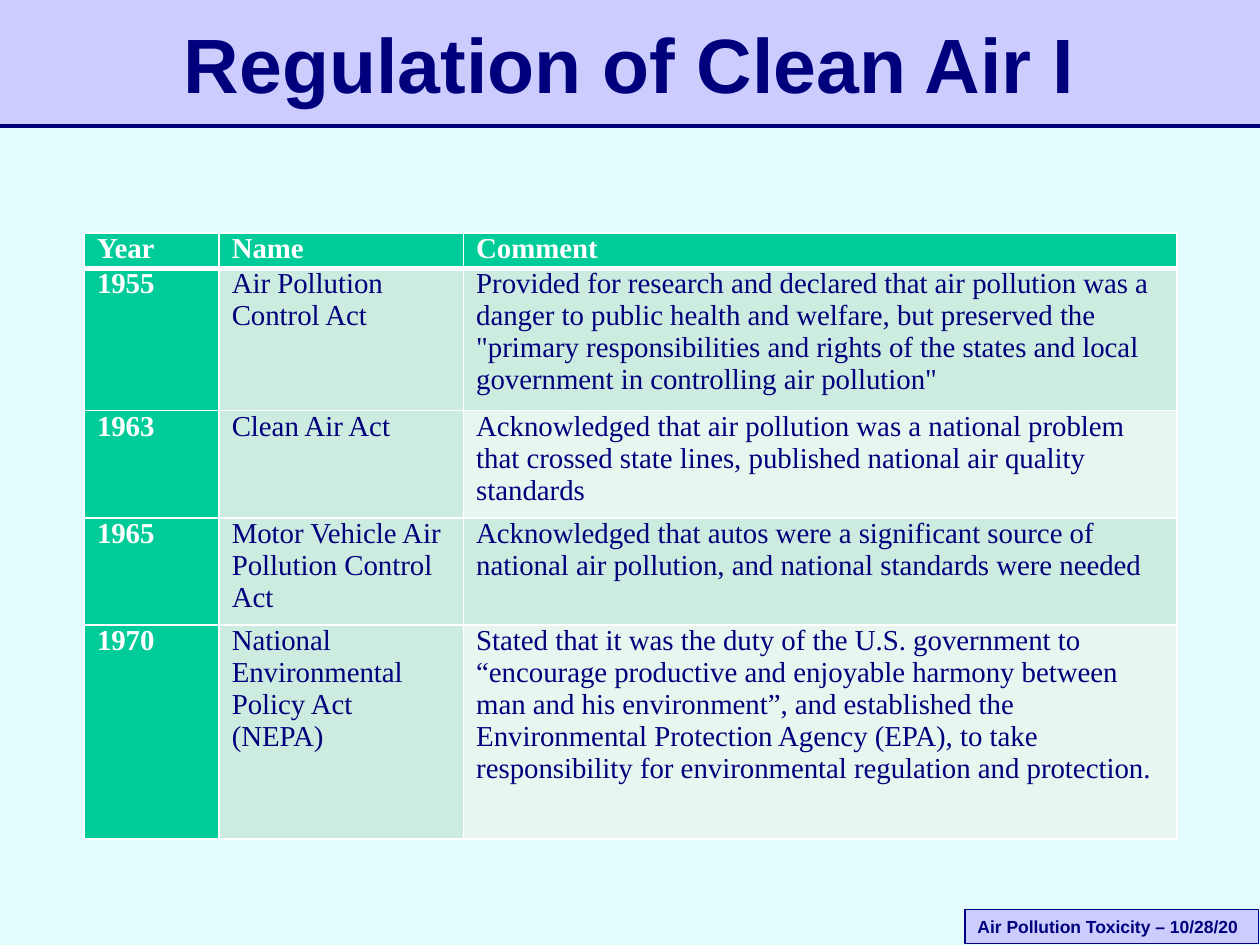
from lxml.etree import SubElement as Sub
from pptx import Presentation
from pptx.dml.color import RGBColor
from pptx.enum.shapes import MSO_CONNECTOR as Link, MSO_SHAPE as Form
from pptx.enum.text import MSO_ANCHOR as Anchor, PP_ALIGN as Align
from pptx.oxml.ns import qn
from pptx.util import Inches, Pt

NAVY, LILAC, SKY, WHITE = "00007D", "CCCCFF", "E2FCFE", "FFFFFF"
GREEN, MINT, PALE = "00CC99", "CBECDE", "E7F6EF"
HEAD = ("Year", "Name", "Comment")
ACTS = (
    ("1955", "Air Pollution Control Act",
     "Provided for research and declared that air pollution was a danger to "
     "public health and welfare, but preserved the \"primary responsibilities "
     "and rights of the states and local government in controlling air pollution\""),
    ("1963", "Clean Air Act",
     "Acknowledged that air pollution was a national problem that crossed "
     "state lines, published national air quality standards"),
    ("1965", "Motor Vehicle Air Pollution Control Act",
     "Acknowledged that autos were a significant source of national air "
     "pollution, and national standards were needed"),
    ("1970", "National Environmental Policy Act (NEPA)",
     "Stated that it was the duty of the U.S. government to “encourage "
     "productive and enjoyable harmony between man and his environment”, and "
     "established the Environmental Protection Agency (EPA), to take "
     "responsibility for environmental regulation and protection."),
)
COLS = (1.07, 1.94, 5.66)
ROWS = (0.28, 1.13, 0.85, 0.85, 1.7)


def color(code):
    return RGBColor.from_string(code)


class Deck:
    sans, serif = "Arial", "Times New Roman"

    def __init__(self, slide):
        self.slide = slide
        self.shapes = slide.shapes
        self.paint(slide.background.fill, SKY)

    def paint(self, fill, code):
        fill.solid()
        fill.fore_color.rgb = color(code)

    def add_text(self, para, text, size, face, code, bold, align=Align.LEFT):
        para.alignment = align
        run = para.add_run()
        run.text = text
        font = run.font
        font.size, font.name, font.bold = Pt(size), face, bold
        font.color.rgb = color(code)

    def box(self, x, y, w, h, code):
        shape = self.shapes.add_shape(
            Form.RECTANGLE, Inches(x), Inches(y), Inches(w), Inches(h))
        shape.shadow.inherit = False
        self.paint(shape.fill, code)
        shape.line.fill.background()
        return shape

    def label(self, x, y, w, h, text):
        shape = self.box(x, y, w, h, LILAC)
        self.paint(shape.line.fill, NAVY)
        shape.line.width = Pt(0.75)
        frame = shape.text_frame
        frame.word_wrap = False
        frame.vertical_anchor = Anchor.MIDDLE
        self.add_text(frame.paragraphs[0], text, 10, self.sans, NAVY, True)

    def rule(self, x, y, end):
        line = self.shapes.add_connector(
            Link.STRAIGHT, Inches(x), Inches(y), Inches(end), Inches(y))
        self.paint(line.line.fill, NAVY)
        line.line.width = Pt(2)
        Sub(line.element.spPr, qn("a:effectLst"))

    def title(self, x, y, w, h, text):
        shape = self.shapes.title
        shape.left, shape.top = Inches(x), Inches(y)
        shape.width, shape.height = Inches(w), Inches(h)
        frame = shape.text_frame
        frame.word_wrap = True
        frame.vertical_anchor = Anchor.MIDDLE
        self.add_text(frame.paragraphs[0], text, 44, self.sans, NAVY, True,
                      Align.CENTER)
        shape.element.getparent().append(shape.element)

    def edge(self, cell, side, width):
        props = cell._tc.get_or_add_tcPr()
        line = Sub(props, qn("a:ln" + side), w=str(Pt(width)))
        fill = Sub(line, qn("a:solidFill"))
        Sub(fill, qn("a:srgbClr"), val=WHITE)

    def cell(self, cell, text, row, col):
        cell.margin_left = cell.margin_right = Inches(0.1)
        cell.margin_top = cell.margin_bottom = 0
        wide = {(0, "B"), (1, "T")}
        for side in "LRTB":
            self.edge(cell, side, 3 if (row, side) in wide else 1)
        key = row == 0 or col == 0
        tint = PALE if col == 2 and row % 2 == 0 else MINT
        self.paint(cell.fill, GREEN if key else tint)
        self.add_text(cell.text_frame.paragraphs[0], text, 16.5, self.serif,
                      WHITE if key else NAVY, key)

    def table(self, x, y, data):
        table = self.shapes.add_table(
            len(ROWS), len(COLS), Inches(x), Inches(y),
            Inches(sum(COLS)), Inches(sum(ROWS))).table
        for col, width in zip(table.columns, COLS):
            col.width = Inches(width)
        for row, height in zip(table.rows, ROWS):
            row.height = Inches(height)
        for r, line in enumerate(data):
            for c, text in enumerate(line):
                self.cell(table.cell(r, c), text, r, c)


def main():
    show = Presentation()
    show.slide_width, show.slide_height = Inches(10), Inches(7.5)
    deck = Deck(show.slides.add_slide(show.slide_layouts[5]))
    deck.box(0, 0, 10, 1, LILAC)
    deck.rule(0, 1, 10)
    deck.label(7.66, 7.22, 2.33, 0.27, "Air Pollution Toxicity – 10/28/20")
    deck.title(0.75, 0.08, 8.5, 0.84, "Regulation of Clean Air I")
    deck.table(0.67, 1.85, (HEAD, *ACTS))
    show.save("out.pptx")


if __name__ == "__main__":
    main()
